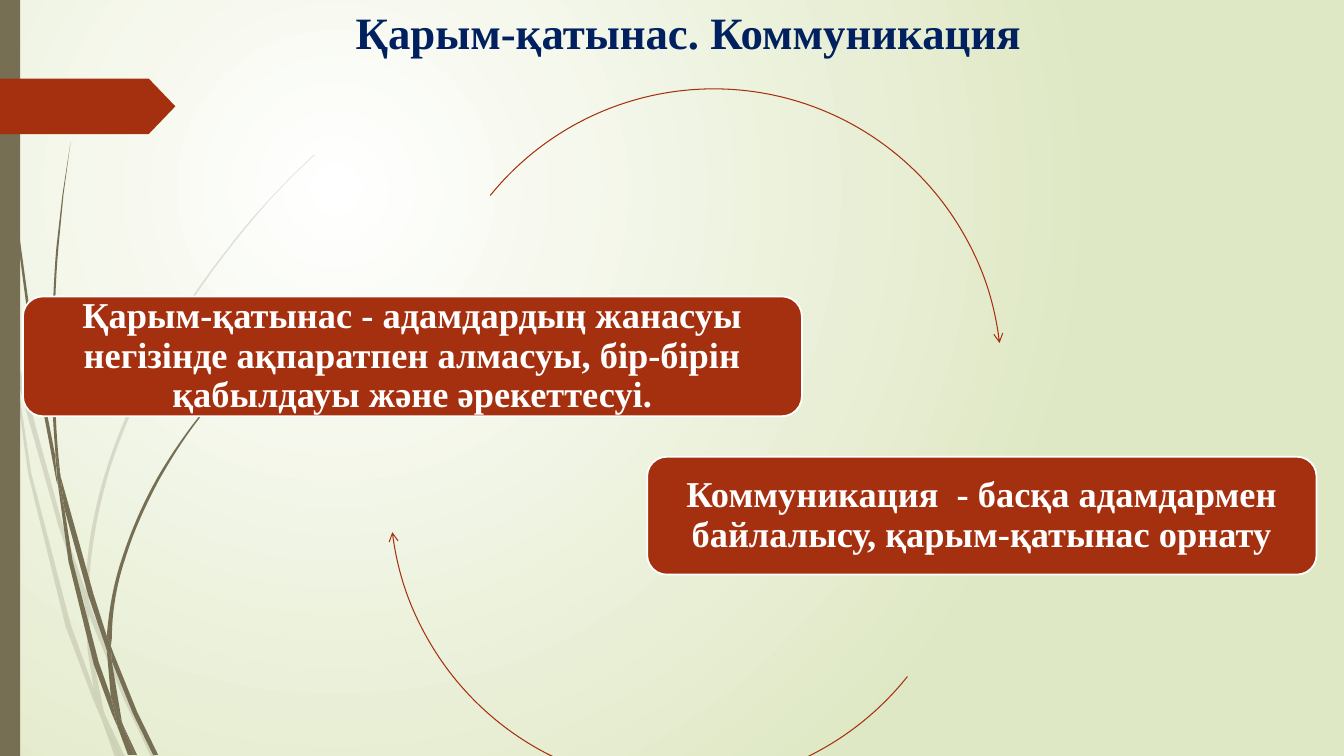
from dataclasses import dataclass

from lxml import etree
from pptx import Presentation
from pptx.dml.color import RGBColor
from pptx.enum.shapes import MSO_SHAPE
from pptx.enum.text import MSO_ANCHOR, PP_ALIGN
from pptx.oxml.ns import qn
from pptx.shapes.autoshape import Shape
from pptx.slide import Slide
from pptx.text.text import TextFrame
from pptx.util import Cm, Pt

RECTANGLE = MSO_SHAPE.RECTANGLE
ROUNDED = MSO_SHAPE.ROUNDED_RECTANGLE
BANNER = MSO_SHAPE.PENTAGON
ARC = MSO_SHAPE.ARC
CENTER = PP_ALIGN.CENTER
MIDDLE = MSO_ANCHOR.MIDDLE
TOP = MSO_ANCHOR.TOP

WHITE = RGBColor(0xFF, 0xFF, 0xFF)
PALE_GREEN = RGBColor(0xDF, 0xE8, 0xC4)
OLIVE = RGBColor(0x76, 0x6F, 0x54)
RUST = RGBColor(0xA5, 0x30, 0x10)
NAVY = RGBColor(0x00, 0x20, 0x60)

FONT = "Times New Roman"
GRASS_UNIT = 2.54 / 100  # cm per unit of the grass outlines
CURVE_STEPS = 8

Segment = tuple[int, ...]  # (x, y) is a line, six numbers are a cubic curve
Outline = tuple[Segment, ...]


@dataclass(frozen=True)
class Grass:
    opacity: int
    blades: tuple[Outline, ...]


@dataclass(frozen=True)
class Card:
    text: str
    left: float
    top: float
    width: float
    height: float


@dataclass(frozen=True)
class CycleArrow:
    left: float
    top: float
    diameter: float
    start_angle: float
    end_angle: float


BACK_GRASS = Grass(20, (
    ((11, 350), (9, 322), (0, 282), (0, 299), (10, 344)),
    ((58, 522), (84, 599), (85, 586), (62, 520), (14, 345), (17, 376)),
    ((92, 607), (88, 596), (88, 610), (123, 694), (150, 751), (155, 751), (127, 692)),
    ((119, 751), (124, 751), (105, 711)),
    ((93, 683), (70, 619), (31, 469), (17, 376), (11, 350), (28, 470), (65, 621),
     (92, 693), (101, 714), (99, 707)),
    ((84, 599), (87, 646), (93, 683), (96, 692), (105, 711), (103, 706), (91, 646),
     (88, 610), (88, 608)),
    ((88, 584), (90, 542, 98, 501, 110, 462), (123, 423, 140, 385, 160, 349),
     (180, 312, 203, 278, 229, 245), (241, 229, 255, 213, 268, 198), (290, 175),
     (312, 154), (312, 153), (289, 175), (268, 197),
     (254, 212, 240, 228, 228, 244), (202, 277, 178, 311, 158, 348),
     (137, 383, 120, 422, 107, 461), (94, 501, 86, 542, 85, 584),
     (85, 586), (88, 596)),
    ((101, 714), (114, 751), (119, 751)),
    ((88, 608), (88, 610), (88, 596), (85, 586), (84, 599)),
    ((96, 692), (93, 683), (99, 707), (101, 714), (119, 751), (105, 711)),
))

FRONT_GRASS = Grass(100, (
    ((7, 110), (17, 233), (33, 355), (56, 477), (57, 481), (55, 457), (55, 453),
     (36, 355), (19, 232), (8, 109), (5, 48), (4, 0), (3, 0), (4, 48)),
    ((88, 592), (106, 645), (106, 633), (106, 631), (93, 590), (60, 472), (64, 505)),
    ((113, 649), (110, 641), (111, 656), (132, 708), (152, 749), (157, 749), (136, 706)),
    ((110, 691), (98, 657), (72, 556), (64, 505), (57, 477), (68, 557), (93, 659),
     (111, 708), (117, 722), (116, 717)),
    ((60, 472), (58, 453), (55, 418, 54, 384, 54, 349), (54, 314, 55, 280, 58, 245),
     (63, 193), (70, 141), (62, 193), (56, 245),
     (53, 279, 52, 314, 52, 349), (51, 382, 52, 416, 55, 449)),
    ((133, 749), (136, 749), (122, 719)),
    ((57, 477), (64, 505), (60, 472), (55, 449), (55, 453)),
    ((111, 633), (111, 606, 116, 578, 125, 552), (133, 526, 145, 500, 158, 476),
     (172, 451, 187, 428, 205, 406), (213, 395, 222, 384, 231, 374),
     (245, 359), (261, 344), (260, 344), (245, 358), (231, 373),
     (221, 384, 212, 394, 204, 405), (186, 427, 170, 450, 156, 474),
     (142, 499, 131, 524, 122, 551), (113, 577, 108, 604, 106, 631), (110, 641)),
    ((117, 722), (127, 749), (131, 749)),
    ((106, 645), (110, 691), (116, 706), (122, 719), (121, 716), (111, 656), (109, 651)),
    ((106, 645), (109, 651), (111, 656), (110, 641), (106, 631), (106, 633)),
    ((116, 706), (110, 691), (116, 717), (117, 722), (130, 749), (133, 749), (122, 719)),
))

CARDS = (
    Card("Қарым-қатынас - адамдардың жанасуы негізінде ақпаратпен алмасуы, "
         "бір-бірін қабылдауы және әрекеттесуі.", 0.58, 7.47, 19.63, 3.02),
    Card("Коммуникация  - басқа адамдармен байлалысу, қарым-қатынас орнату",
         16.31, 11.51, 16.87, 2.97),
)

CYCLE_ARROWS = (
    CycleArrow(10.74, 2.24, 14.5, 219, 353.3),
    CycleArrow(9.83, 5.18, 14.63, 38.5, 172.8),
)


def flatten(outline: Outline) -> list[tuple[float, float]]:
    """Turn lines and cubic curves into a list of points."""
    points: list[tuple[float, float]] = []
    for segment in outline:
        if len(segment) == 2:
            points.append((segment[0], segment[1]))
            continue
        x0, y0 = points[-1]
        x1, y1, x2, y2, x3, y3 = segment
        for step in range(1, CURVE_STEPS + 1):
            t = step / CURVE_STEPS
            a, b, c, d = (1 - t) ** 3, 3 * t * (1 - t) ** 2, 3 * t * t * (1 - t), t ** 3
            points.append((a * x0 + b * x1 + c * x2 + d * x3,
                           a * y0 + b * y1 + c * y2 + d * y3))
    return points


def paint(shape: Shape, color: RGBColor) -> None:
    shape.shadow.inherit = False
    shape.fill.solid()
    shape.fill.fore_color.rgb = color
    shape.line.fill.background()


def draw_background(page: Slide) -> None:
    fill = page.background.fill
    fill.gradient()
    for stop, color in zip(fill.gradient_stops, (WHITE, PALE_GREEN)):
        stop.color.rgb = color
    gradient = page.element.find(".//" + qn("a:gradFill"))
    gradient.remove(gradient.find(qn("a:lin")))
    circle = etree.SubElement(gradient, qn("a:path"), {"path": "circle"})
    etree.SubElement(circle, qn("a:fillToRect"),
                     {"l": "50000", "t": "50000", "r": "100000", "b": "100000"})


def draw_grass(page: Slide, grass: Grass) -> None:
    group = page.shapes.add_group_shape()
    for outline in grass.blades:
        points = [(Cm(x * GRASS_UNIT), Cm(y * GRASS_UNIT)) for x, y in flatten(outline)]
        builder = group.shapes.build_freeform(*points[0])
        builder.add_line_segments(points[1:], close=True)
        blade = builder.convert_to_shape()
        paint(blade, OLIVE)
        if grass.opacity < 100:
            color = blade.element.spPr.find(".//" + qn("a:srgbClr"))
            etree.SubElement(color, qn("a:alpha"), {"val": str(grass.opacity * 1000)})


def draw_block(page: Slide, kind: MSO_SHAPE, left: float, top: float,
               width: float, height: float, color: RGBColor) -> Shape:
    block = page.shapes.add_shape(kind, Cm(left), Cm(top), Cm(width), Cm(height))
    paint(block, color)
    return block


def write(frame: TextFrame, text: str, size: int, color: RGBColor, anchor: MSO_ANCHOR,
          line_spacing: float = 1.0) -> None:
    frame.word_wrap = True
    frame.vertical_anchor = anchor
    para = frame.paragraphs[0]
    para.alignment = CENTER
    para.line_spacing = line_spacing
    span = para.add_run()
    span.text = text
    span.font.name, span.font.size, span.font.bold = FONT, Pt(size), True
    span.font.color.rgb = color


def draw_card(page: Slide, card: Card) -> None:
    box = draw_block(page, ROUNDED, card.left, card.top, card.width, card.height, RUST)
    box.line.color.rgb = WHITE
    box.line.width = Pt(1.25)
    frame = box.text_frame
    frame.margin_left = frame.margin_right = Cm(0.28)
    frame.margin_top = frame.margin_bottom = Cm(0)
    write(frame, card.text, 26, WHITE, MIDDLE, 0.9)


def draw_cycle_arrow(page: Slide, arrow: CycleArrow) -> None:
    arc = draw_block(page, ARC, arrow.left, arrow.top, arrow.diameter, arrow.diameter, RUST)
    arc.fill.background()
    # Angles are stored in 60000ths of a degree, adjustments in 100000ths
    arc.adjustments[0] = arrow.start_angle * 0.6
    arc.adjustments[1] = arrow.end_angle * 0.6
    arc.line.color.rgb = RUST
    arc.line.width = Pt(0.75)
    etree.SubElement(arc.element.spPr.find(qn("a:ln")), qn("a:tailEnd"), {"type": "arrow"})


def main() -> None:
    deck = Presentation()
    deck.slide_width, deck.slide_height = Cm(33.87), Cm(19.05)
    page = deck.slides.add_slide(deck.slide_layouts[6])

    # Backdrop
    draw_background(page)
    for grass in (BACK_GRASS, FRONT_GRASS):
        draw_grass(page, grass)
    draw_block(page, RECTANGLE, 0, 0, 0.51, 19.05, OLIVE)
    banner = draw_block(page, BANNER, 0, 1.98, 4.42, 1.4, RUST)
    banner.adjustments[0] = 0.48

    # Title
    title = page.shapes.add_textbox(Cm(2.77), Cm(0), Cm(29.16), Cm(3.56))
    write(title.text_frame, "Қарым-қатынас. Коммуникация", 32, NAVY, TOP)

    # Cycle of two cards
    for card, arrow in zip(CARDS, CYCLE_ARROWS):
        draw_card(page, card)
        draw_cycle_arrow(page, arrow)

    deck.save("out.pptx")


if __name__ == "__main__":
    main()
